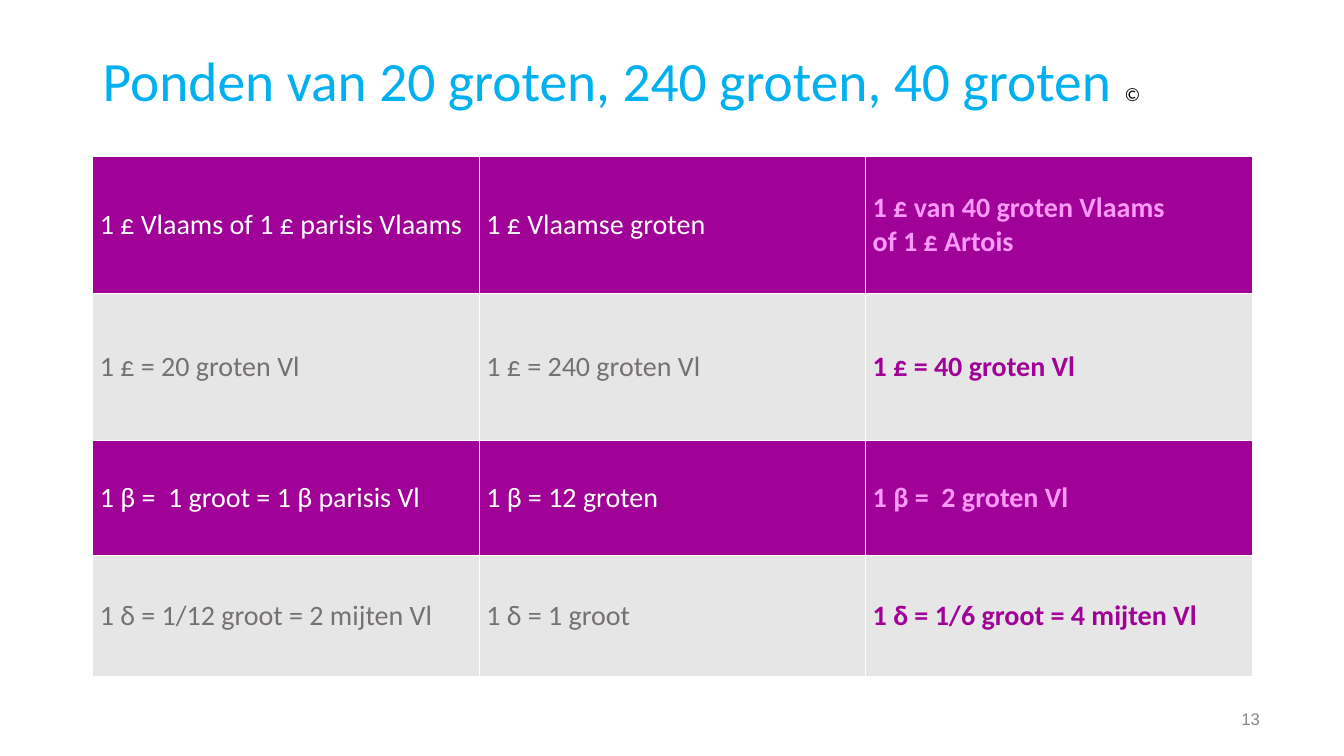
from pptx import Presentation
from pptx.dml.color import RGBColor
from pptx.enum.text import MSO_ANCHOR as ANCHOR, PP_ALIGN as ALIGN
from pptx.util import Inches, Pt


def rgb(color):
    return RGBColor.from_string(color)


class Deck:
    PURPLE, PINK, WHITE = "A00298", "FE9AF9", "FFFFFF"
    GREY, DARK = "E7E6E6", "767171"
    FONT = "Calibri"

    def __init__(self):
        self.prs = Presentation()
        self.prs.slide_width, self.prs.slide_height = Inches(13.33), Inches(7.5)
        self.s = self.prs.slides.add_slide(self.prs.slide_layouts[6])

    def style(self, r, size, color, bold=False, font=FONT):
        r.font.name, r.font.size, r.font.bold = font, Pt(size), bold
        r.font.color.rgb = rgb(color)

    def text(self, text, box, size, color, font=FONT, anchor=ANCHOR.MIDDLE,
             align=ALIGN.LEFT, inset=0.04, spacing=1.0):
        tf = self.s.shapes.add_textbox(*map(Inches, box)).text_frame
        tf.word_wrap, tf.vertical_anchor = True, anchor
        tf.margin_top = Inches(inset)
        tf.text = text
        p = tf.paragraphs[0]
        p.alignment, p.line_spacing = align, spacing
        self.style(p.runs[0], size, color, font=font)
        return p

    def table(self, rows, box, heights):
        table = self.s.shapes.add_table(
            len(rows), len(rows[0]), *map(Inches, box)).table
        for row, height in zip(table.rows, heights):
            row.height = Inches(height)
        for i, row in enumerate(rows):
            fill, plain, accent = (
                (self.GREY, self.DARK, self.PURPLE) if i % 2
                else (self.PURPLE, self.WHITE, self.PINK))
            for j, text in enumerate(row):
                last = j == len(row) - 1
                self.cell(table.cell(i, j), text, fill,
                          accent if last else plain, last)

    def cell(self, cell, text, fill, color, bold):
        cell.fill.solid()
        cell.fill.fore_color.rgb = rgb(fill)
        cell.vertical_anchor = ANCHOR.MIDDLE
        cell.margin_left = cell.margin_right = Inches(0.07)
        cell.margin_top = cell.margin_bottom = Inches(0.04)
        cell.text_frame.text = text
        for r in cell.text_frame.paragraphs[0].runs:
            self.style(r, 20, color, bold)


def main():
    deck = Deck()
    title = deck.text("Ponden van 20 groten, 240 groten, 40 groten ",
                      (0.92, 0.4, 11.5, 1.45), 39.6, "00B0F0",
                      anchor=ANCHOR.TOP, inset=0.13, spacing=0.9)
    mark = title.add_run()
    mark.text = "©"
    deck.style(mark, 13.5, "000000")

    deck.table([
        ("1 £ Vlaams of 1 £ parisis Vlaams", "1 £ Vlaamse groten",
         "1 £ van 40 groten Vlaams \vof 1 £ Artois"),
        ("1 £ = 20 groten Vl", "1 £ = 240 groten Vl", "1 £ = 40 groten Vl"),
        ("1 β =  1 groot = 1 β parisis Vl", "1 β = 12 groten",
         "1 β =  2 groten Vl"),
        ("1 δ = 1/12 groot = 2 mijten Vl", "1 δ = 1 groot",
         "1 δ = 1/6 groot = 4 mijten Vl"),
    ], (0.92, 1.55, 11.5, 5.15), (1.36, 1.46, 1.14, 1.2))

    deck.text("13", (12.11, 6.94, 0.59, 0.4), 12, "898989",
              font="Arial", align=ALIGN.CENTER)
    deck.prs.save("out.pptx")


if __name__ == "__main__":
    main()
